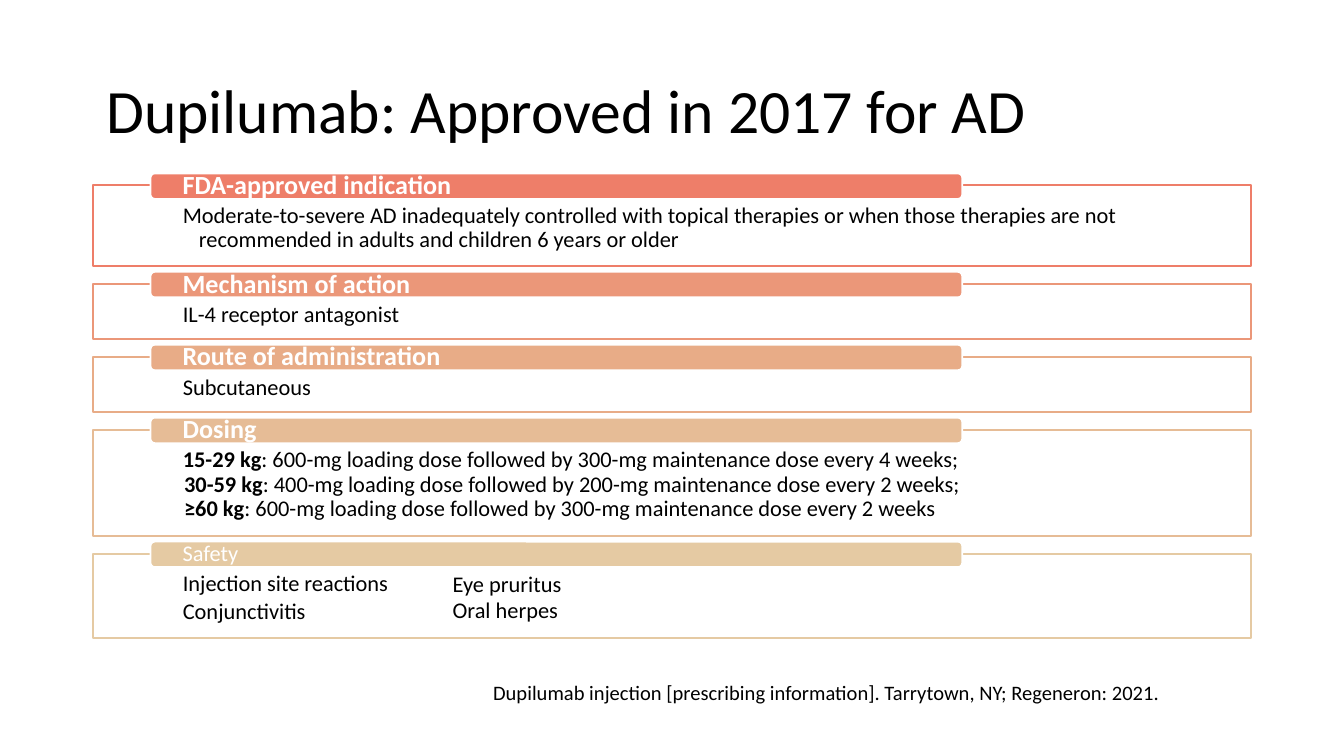
from lxml import etree
from pptx import Presentation
from pptx import util as u
from pptx.dml.color import RGBColor
from pptx.enum import shapes, text
from pptx.oxml.ns import qn

BLACK = RGBColor(0x00, 0x00, 0x00)
WHITE = RGBColor(0xFF, 0xFF, 0xFF)
CORAL = RGBColor(0xEE, 0x7E, 0x69)
SALMON = RGBColor(0xEB, 0x97, 0x79)
PEACH = RGBColor(0xE8, 0xAC, 0x87)
APRICOT = RGBColor(0xE6, 0xBC, 0x96)
SAND = RGBColor(0xE5, 0xCA, 0xA3)

LEFT, WIDTH = 0.69, 8.62
TOP, BOTTOM = 1.38, 4.75
HEADER_RISE = 0.09

# heading, heading size, heading bold, colour, box height, hanging indent,
# paragraphs; a paragraph is a list of lines, a line is (bold lead, rest)
SECTIONS = [
    ("FDA-approved indication", 14, True, CORAL, 0.6, 0.12,
     [[("", "Moderate-to-severe AD inadequately controlled with topical therapies "
            "or when those therapies are not recommended in adults and children "
            "6 years or older")]]),
    ("Mechanism of action", 14, True, SALMON, 0.41, 0.12,
     [[("", "IL-4 receptor antagonist")]]),
    ("Route of administration", 14, True, PEACH, 0.41, 0.12,
     [[("", "Subcutaneous")]]),
    ("Dosing", 14, True, APRICOT, 0.79, 0.01,
     [[("15-29 kg", ": 600-mg loading dose followed by 300-mg maintenance dose every 4 weeks; "),
       ("30-59 kg", ": 400-mg loading dose followed by 200-mg maintenance dose every 2 weeks; "),
       ("≥60 kg", ": 600-mg loading dose followed by 300-mg maintenance dose every 2 weeks")]]),
    ("Safety", 12, False, SAND, 0.63, 0.01,
     [[("", "Injection site reactions")], [("", "Conjunctivitis")]]),
]


class Deck:
    font = "Calibri"

    def __init__(self, width):
        """Start a 16:9 deck with one title-only slide."""
        self.prs = Presentation()
        self.prs.slide_width = u.Inches(width)
        self.prs.slide_height = u.Inches(width * 9 / 16)
        self.s = self.prs.slides.add_slide(self.prs.slide_layouts[5])

    def format(self, p, size, color=BLACK, spacing=0.9, after=0, indent=0):
        """Style a filled paragraph; indent is a hanging indent in inches."""
        p.alignment = text.PP_ALIGN.LEFT
        p.line_spacing = spacing
        p.space_after = u.Pt(after)
        if indent:
            pPr = p._p.get_or_add_pPr()
            pPr.set("marL", str(u.Inches(indent)))
            pPr.set("indent", str(-u.Inches(indent)))
        for r in p.runs:
            r.font.name = self.font
            r.font.size = u.Pt(size)
            r.font.color.rgb = color

    def title(self, words, x, y, w, h, size):
        sp = self.s.shapes.title
        sp.left, sp.top, sp.width, sp.height = map(u.Inches, (x, y, w, h))
        tf = sp.text_frame
        tf.text = words
        tf.auto_size = text.MSO_AUTO_SIZE.NONE
        tf.vertical_anchor = text.MSO_ANCHOR.MIDDLE
        self.format(tf.paragraphs[0], size)

    def text_box(self, lines, x, y, w, h, size, **style):
        tf = self.s.shapes.add_textbox(*map(u.Inches, (x, y, w, h))).text_frame
        tf.word_wrap = True
        tf.text = "\n".join(lines)
        for p in tf.paragraphs:
            self.format(p, size, **style)

    def shape(self, kind, x, y, w, h, fill, line, insets):
        """Add a filled shape; insets are left, top, right, bottom."""
        sp = self.s.shapes.add_shape(kind, *map(u.Inches, (x, y, w, h)))
        sp.shadow.inherit = False
        sp.fill.solid()
        sp.fill.fore_color.rgb = fill
        sp.line.color.rgb = line
        sp.line.width = u.Pt(1)
        tf = sp.text_frame
        tf.word_wrap = True
        tf.margin_left, tf.margin_top, tf.margin_right, tf.margin_bottom = map(u.Inches, insets)
        return sp

    def box(self, paragraphs, y, h, color, indent):
        sp = self.shape(shapes.MSO_SHAPE.RECTANGLE, LEFT, y, WIDTH, h,
                        WHITE, color, (0.67, 0.14, 0.67, 0.09))
        white = sp._element.spPr.find(qn("a:solidFill"))[0]
        etree.SubElement(white, qn("a:alpha")).set("val", "90000")
        tf = sp.text_frame
        tf.vertical_anchor = text.MSO_ANCHOR.TOP
        for i, lines in enumerate(paragraphs):
            p = tf.add_paragraph() if i else tf.paragraphs[0]
            for j, (lead, rest) in enumerate(lines):
                if j:
                    p.add_line_break()
                if lead:
                    r = p.add_run()
                    r.text = lead
                    r.font.bold = True
                p.add_run().text = rest
            self.format(p, 12, after=1.8, indent=indent)

    def header(self, words, y, color, size, bold):
        sp = self.shape(shapes.MSO_SHAPE.ROUNDED_RECTANGLE, 1.12, y, 6.04, 0.19,
                        color, WHITE, (0.23, 0, 0.23, 0))
        tf = sp.text_frame
        tf.text = words
        tf.vertical_anchor = text.MSO_ANCHOR.MIDDLE
        self.format(tf.paragraphs[0], size, WHITE)
        tf.paragraphs[0].runs[0].font.bold = bold


def main():
    deck = Deck(10)
    deck.title("Dupilumab: Approved in 2017 for AD", LEFT, 0.3, WIDTH, 1.09, 33)
    heights = [section[4] for section in SECTIONS]
    gap = (BOTTOM - TOP - sum(heights)) / (len(heights) - 1)
    y = TOP
    for heading, size, bold, color, height, indent, paragraphs in SECTIONS:
        deck.box(paragraphs, y, height, color, indent)
        deck.header(heading, y - HEADER_RISE, color, size, bold)
        y += height + gap
    deck.text_box(["Eye pruritus", "Oral herpes"], 3.27, 4.19, 5, 0.5, 12,
                  spacing=1.0, indent=0.01)
    deck.text_box(["Dupilumab injection [prescribing information]. "
                   "Tarrytown, NY; Regeneron: 2021."], 3.57, 5.03, 6.29, 0.5, 11)
    deck.prs.save("out.pptx")


if __name__ == "__main__":
    main()
